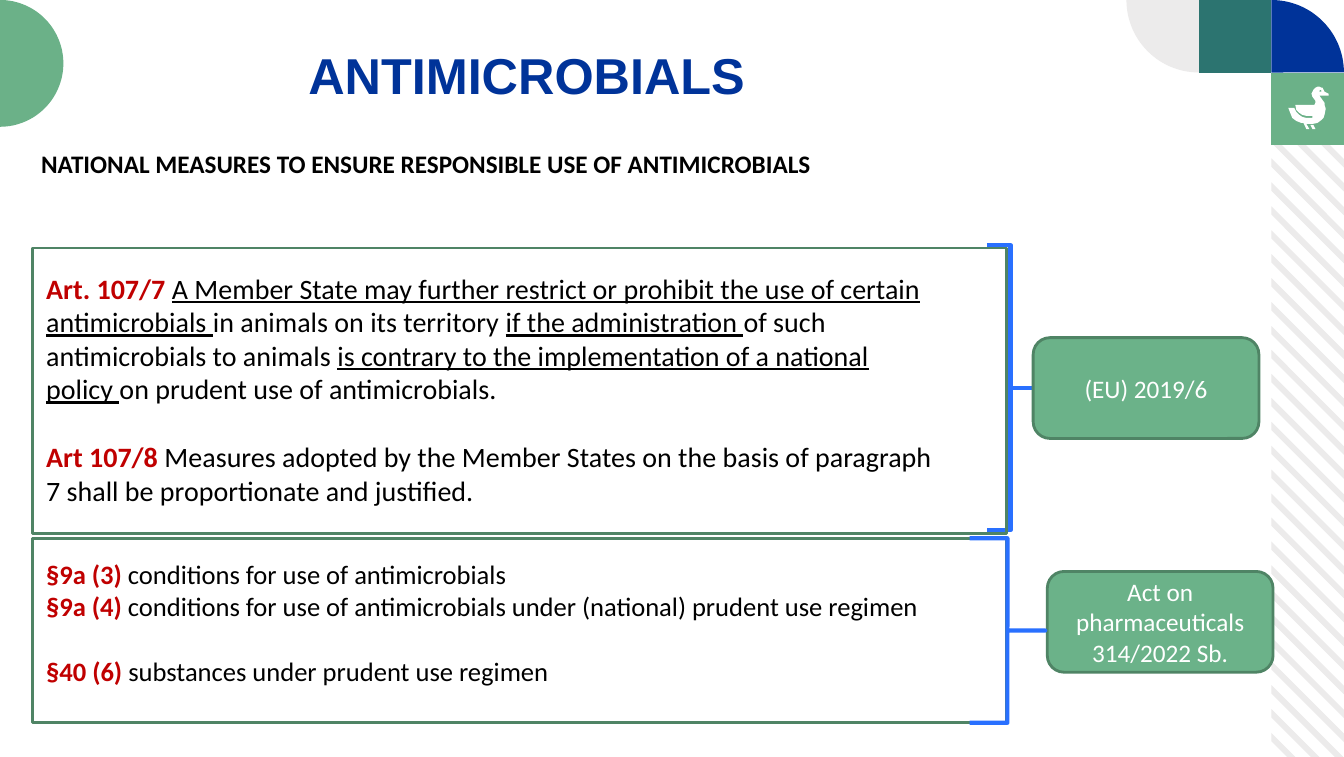
"""Builds the slide on national measures for the use of antimicrobials."""
from math import cos, radians, sin

from pptx import Presentation
from pptx.dml.color import RGBColor
from pptx.enum.shapes import MSO_SHAPE as Preset
from pptx.enum.text import MSO_ANCHOR as Anchor, PP_ALIGN as Align
from pptx.util import Pt

NAVY = RGBColor(0x00, 0x33, 0x99)
TEAL = RGBColor(0x2C, 0x74, 0x70)
GREEN = RGBColor(0x6B, 0xB1, 0x88)
LABEL_GREEN = RGBColor(0x6B, 0xB2, 0x89)
BORDER_GREEN = RGBColor(0x4F, 0x84, 0x65)
BLUE = RGBColor(0x29, 0x70, 0xFF)
GREY = RGBColor(0xEC, 0xEB, 0xEB)
RED = RGBColor(0xC0, 0x00, 0x00)
BLACK = RGBColor(0x00, 0x00, 0x00)
WHITE = RGBColor(0xFF, 0xFF, 0xFF)

WIDTH, HEIGHT = 960, 540.7
TILE = 51.8
COLUMN = WIDTH - TILE
STRIPE_TOP = 2 * TILE
STRIPE_START, STRIPE_STEP, STRIPE_DEPTH, STRIPE_COUNT = 61.9, 17.1, 6, 28

TITLE = {"name": "Arial", "size": Pt(36), "bold": True, "color": NAVY}
HEADING = {"name": "Calibri", "size": Pt(18), "bold": True, "color": BLACK}
LABEL = {"name": "Calibri", "size": Pt(18), "color": WHITE}
ARTICLE = {"name": "Calibri", "size": Pt(20), "color": BLACK}
SECTION = {**ARTICLE, "size": Pt(19)}
REFERENCE = {"bold": True, "color": RED}
UNDERLINED = {"underline": True}
PLAIN = {}

ARTICLES = [
    [("Art. 107/7 ", REFERENCE),
     ("A Member State may further restrict or prohibit the use of certain antimicrobials ", UNDERLINED),
     ("in animals on its territory ", PLAIN),
     ("if the administration ", UNDERLINED),
     ("of such antimicrobials to animals ", PLAIN),
     ("is contrary to the implementation of a national policy ", UNDERLINED),
     ("on prudent use of antimicrobials.", PLAIN)],
    [("Art 107/8 ", REFERENCE),
     ("Measures adopted by the Member States on the basis of paragraph 7 "
      "shall be proportionate and justified.", PLAIN)],
]
SECTIONS = [
    [("§9a (3) ", REFERENCE), ("conditions for use of antimicrobials", PLAIN)],
    [("§9a (4) ", REFERENCE),
     ("conditions for use of antimicrobials under (national) prudent use regimen", PLAIN)],
    [("§40 (6) ", REFERENCE), ("substances under prudent use regimen", PLAIN)],
]
TEXTS = [
    ((3.6, 23.8, 745.2, 37.4), [[("ANTIMICROBIALS", PLAIN)]], TITLE,
     {"alignment": Align.CENTER}, {"margin_top": Pt(8)}, {}),
    ((25.9, 190.1, 650.9, 177.1), ARTICLES, ARTICLE, {}, {}, {1: Pt(24.4)}),
    ((22.3, 102.2, 696.2, 28.8),
     [[("NATIONAL MEASURES TO ENSURE RESPONSIBLE USE OF ANTIMICROBIALS", PLAIN)]],
     HEADING, {}, {}, {}),
    ((25.9, 395.3, 696.2, 121), SECTIONS, SECTION, {}, {}, {2: Pt(23.2)}),
]

BRACE = (Preset.RIGHT_BRACE, None, BLUE, 3)
FRAME = (Preset.RECTANGLE, None, BORDER_GREEN, 2)
BADGE = (Preset.ROUNDED_RECTANGLE, LABEL_GREEN, BORDER_GREEN, 2)
DIAGRAM = [
    (BRACE, (704.9, 175, 33.8, 203.8), []),
    (BADGE, (748.1, 408.2, 161.3, 72), ["Act on pharmaceuticals", "314/2022 Sb."]),
    (FRAME, (23, 177.1, 696.2, 203.8), []),
    (FRAME, (23, 384.5, 696.2, 131.8), []),
    (BRACE, (692.6, 384.5, 54, 131.8), []),
    (BADGE, (738, 241.2, 161.3, 72), ["(EU) 2019/6"]),
]

DUCK_LEFT, DUCK_TOP, DUCK_UNIT = 920.2, 61.9, 0.72
DUCK = [
    [(27, 42), (25, 38), (22, 38), (24, 42)],
    [(40, 7), (36, 5), (34, 1), (33, 1), (33, 5), (31, 5), (31, 4), (32, 3), (33, 4),
     (33, 1), (31, 0), (29, 0), (27, 1), (25, 3), (24, 5), (23, 7), (24, 10), (27, 14),
     (27, 16), (26, 18), (25, 18), (7, 18), (8, 23), (11, 26), (14, 28), (18, 29),
     (24, 29), (24, 31), (18, 31), (14, 30), (11, 28), (8, 25), (6, 21), (0, 21),
     (2, 26), (4, 31), (8, 34), (13, 36), (15, 36), (18, 42), (21, 42), (18, 37),
     (24, 37), (29, 36), (33, 33), (35, 31), (36, 28), (37, 23), (37, 21), (36, 18),
     (36, 16), (31, 9), (40, 9)],
]


def draw_outlines(slide, outlines, color):
    contours = [[(Pt(x), Pt(y)) for x, y in outline] for outline in outlines]
    builder = slide.shapes.build_freeform(*contours[0][0], scale=1.0)
    for index, contour in enumerate(contours):
        if index:
            builder.move_to(*contour[0])
        builder.add_line_segments(contour[1:], close=True)
    shape = builder.convert_to_shape()
    shape.shadow.inherit = False
    shape.fill.solid()
    shape.fill.fore_color.rgb = color
    shape.line.fill.background()


def square(left, top):
    return [(left, top), (left + TILE, top), (left + TILE, top + TILE), (left, top + TILE)]


def arc(x, y, radius, start, end):
    return [(x + radius * cos(radians(angle)), y + radius * sin(radians(angle)))
            for angle in range(start, end + 1, 3)]


def stripe(top_at_left):
    edges = []
    for start in (top_at_left, top_at_left + STRIPE_DEPTH):
        first = max(0, STRIPE_TOP - start)
        last = min(TILE, HEIGHT - start)
        edges.append([(COLUMN + run, start + run) for run in (first, last)])
    upper, lower = edges
    return upper + lower[::-1]


def format_font(font, values):
    for name, value in values.items():
        if name == "color":
            font.color.rgb = value
        else:
            setattr(font, name, value)


def write_paragraphs(frame, paragraphs, base, layout, gaps):
    for index, runs in enumerate(paragraphs):
        paragraph = frame.add_paragraph() if index else frame.paragraphs[0]
        for name, value in layout.items():
            setattr(paragraph, name, value)
        if index in gaps:
            paragraph.space_before = gaps[index]
        for text, style in runs:
            run = paragraph.add_run()
            run.text = text
            format_font(run.font, {**base, **style})


def draw_decoration(slide):
    stripes = [stripe(STRIPE_START + STRIPE_STEP * index) for index in range(STRIPE_COUNT)]
    duck = [[(DUCK_LEFT + x * DUCK_UNIT, DUCK_TOP + y * DUCK_UNIT) for x, y in outline]
            for outline in DUCK]
    for outlines, color in [
        (stripes, GREY),
        ([square(COLUMN - TILE, 0)], TEAL),
        ([square(COLUMN, TILE)], GREEN),
        ([[(COLUMN, TILE)] + arc(COLUMN, TILE, TILE, 270, 360)], NAVY),
        ([[(COLUMN - TILE, 0)] + arc(COLUMN - TILE, 0, TILE, 90, 180)], GREY),
        (duck, WHITE),
        ([arc(0, 45.3, 45.3, -90, 90)], GREEN),
    ]:
        draw_outlines(slide, outlines, color)


def draw_diagram(slide):
    for (preset, fill, line, weight), box, lines in DIAGRAM:
        shape = slide.shapes.add_shape(preset, *map(Pt, box))
        shape.shadow.inherit = False
        if preset == Preset.RIGHT_BRACE:
            shape.adjustments[0] = 0
        if fill is None:
            shape.fill.background()
        else:
            shape.fill.solid()
            shape.fill.fore_color.rgb = fill
        shape.line.color.rgb = line
        shape.line.width = Pt(weight)
        if lines:
            shape.text_frame.word_wrap = True
            shape.text_frame.vertical_anchor = Anchor.MIDDLE
            write_paragraphs(shape.text_frame, [[(line_text, PLAIN)] for line_text in lines],
                             LABEL, {"alignment": Align.CENTER}, {})


def draw_texts(slide):
    for box, paragraphs, base, layout, frame_values, gaps in TEXTS:
        frame = slide.shapes.add_textbox(*map(Pt, box)).text_frame
        for name, value in {"word_wrap": True, **frame_values}.items():
            setattr(frame, name, value)
        write_paragraphs(frame, paragraphs, base, layout, gaps)


def main():
    presentation = Presentation()
    presentation.slide_width, presentation.slide_height = Pt(WIDTH), Pt(HEIGHT)
    slide = presentation.slides.add_slide(presentation.slide_layouts[6])
    draw_decoration(slide)
    draw_diagram(slide)
    draw_texts(slide)
    presentation.save("out.pptx")


if __name__ == "__main__":
    main()
